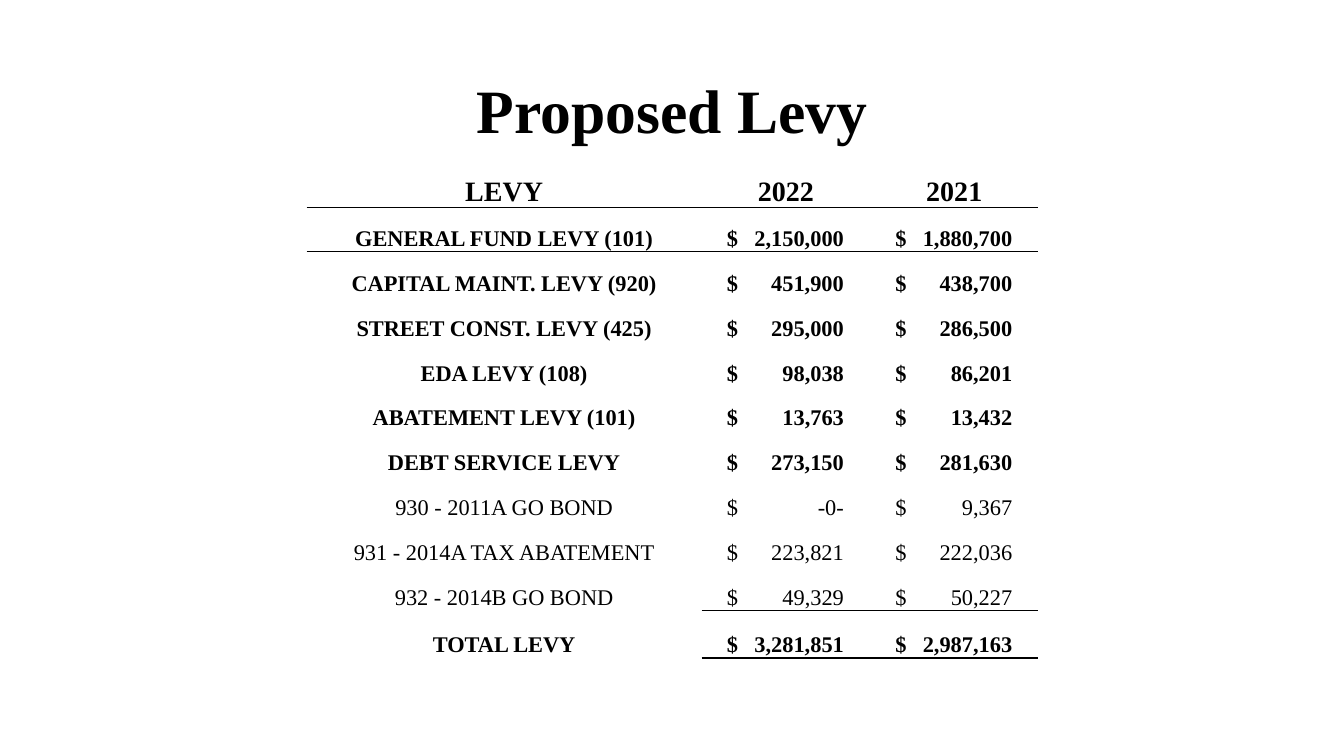
from dataclasses import dataclass

from lxml import etree
from pptx import Presentation
from pptx.dml.color import RGBColor
from pptx.enum.text import MSO_ANCHOR, PP_ALIGN
from pptx.oxml.ns import qn
from pptx.util import Inches, Pt

CENTER, LEFT = PP_ALIGN.CENTER, PP_ALIGN.LEFT
MIDDLE, BOTTOM = MSO_ANCHOR.MIDDLE, MSO_ANCHOR.BOTTOM
TITLE_ONLY = 5
NO_STYLE = "{2D5ABB26-0587-4C30-8999-92F81FD0307C}"


@dataclass(frozen=True)
class Theme:
    font: str = "Times New Roman"
    ink: str = "000000"
    title: int = 44
    header: int = 20
    body: int = 16
    thin: float = 0.5
    thick: float = 2


THEME = Theme()

HEADER = ("LEVY", "2022", "2021")
LEVIES = [
    ("GENERAL FUND LEVY (101)", "2,150,000", "1,880,700"),
    ("CAPITAL MAINT. LEVY (920)", "451,900", "438,700"),
    ("STREET CONST. LEVY (425)", "295,000", "286,500"),
    ("EDA LEVY (108)", "98,038", "86,201"),
    ("ABATEMENT LEVY (101)", "13,763", "13,432"),
    ("DEBT SERVICE LEVY", "273,150", "281,630"),
]
BONDS = [
    ("930 - 2011A GO BOND", "-0-", "9,367"),
    ("931 - 2014A TAX ABATEMENT", "223,821", "222,036"),
    ("932 - 2014B GO BOND", "49,329", "50,227"),
]
TOTAL = ("TOTAL LEVY", "3,281,851", "2,987,163")

COLUMN_WIDTHS = (3.92, 1.67, 1.67)
ROW_HEIGHT, LAST_BOND_HEIGHT, TOTAL_HEIGHT = 4 / 9, 0.45, 0.47
DOLLAR_INDENT, AMOUNT_TAB = 0.25, 1.16


def set_attrs(obj, formats):
    for name, value in formats.items():
        setattr(obj, name, value)


def write(p, text, size, bold=True, align=CENTER):
    p.alignment = align
    r = p.add_run()
    r.text = text
    set_attrs(r.font, {"name": THEME.font, "size": Pt(size), "bold": bold})
    r.font.color.rgb = RGBColor.from_string(THEME.ink)


def add_title(s, text):
    sp = s.shapes.title
    set_attrs(sp, {"left": Inches(0.92), "top": Inches(0.4),
                   "width": Inches(11.5), "height": Inches(1.45)})
    tf = sp.text_frame
    set_attrs(tf, {"vertical_anchor": MIDDLE, "word_wrap": True})
    p = tf.paragraphs[0]
    p.line_spacing = 0.9
    write(p, text, THEME.title)


def add_border(cell, side, width):
    ln = etree.SubElement(cell._tc.get_or_add_tcPr(), qn(f"a:ln{side}"), w=str(Pt(width)))
    fill = etree.SubElement(ln, qn("a:solidFill"))
    etree.SubElement(fill, qn("a:srgbClr"), val=THEME.ink)


def add_right_tab(p, position):
    tabs = etree.SubElement(p._p.get_or_add_pPr(), qn("a:tabLst"))
    etree.SubElement(tabs, qn("a:tab"), pos=str(Inches(position)), algn="r")


def fill_cell(cell, text, size, bold, amount, borders):
    set_attrs(cell, {"margin_left": Inches(DOLLAR_INDENT if amount else 0),
                     "margin_right": 0, "margin_top": 0, "margin_bottom": 0,
                     "vertical_anchor": BOTTOM})
    for side, width in borders.items():
        add_border(cell, side, width)
    cell.fill.background()
    p = cell.text_frame.paragraphs[0]
    if amount:
        add_right_tab(p, AMOUNT_TAB)
        write(p, f"$\t{text}", size, bold, LEFT)
    else:
        write(p, text, size, bold)


def cell_borders(row, column, last):
    borders = {}
    if row == 1 or (row == last and column):
        borders["T"] = THEME.thin
    if row == 0 or (row == last - 1 and column):
        borders["B"] = THEME.thin
    if row == last and column:
        borders["B"] = THEME.thick
    return borders


def add_levy_table(s):
    rows = [HEADER, *LEVIES, *BONDS, TOTAL]
    last = len(rows) - 1
    heights = [ROW_HEIGHT] * (last - 1) + [LAST_BOND_HEIGHT, TOTAL_HEIGHT]
    frame = s.shapes.add_table(len(rows), len(HEADER), Inches(3.04), Inches(1.61),
                               Inches(sum(COLUMN_WIDTHS)), Inches(sum(heights)))
    table = frame.table
    set_attrs(table, {"first_row": False, "horz_banding": False})
    table._tbl.tblPr.find(qn("a:tableStyleId")).text = NO_STYLE
    for column, width in zip(table.columns, COLUMN_WIDTHS):
        column.width = Inches(width)
    for i, (values, height) in enumerate(zip(rows, heights)):
        table.rows[i].height = Inches(height)
        size = THEME.body if i else THEME.header
        for j, text in enumerate(values):
            fill_cell(table.cell(i, j), text, size, values not in BONDS,
                      i > 0 and j > 0, cell_borders(i, j, last))


def main():
    prs = Presentation()
    set_attrs(prs, {"slide_width": Inches(13.33), "slide_height": Inches(7.5)})
    s = prs.slides.add_slide(prs.slide_layouts[TITLE_ONLY])
    add_title(s, "Proposed Levy")
    add_levy_table(s)
    prs.save("out.pptx")


if __name__ == "__main__":
    main()
